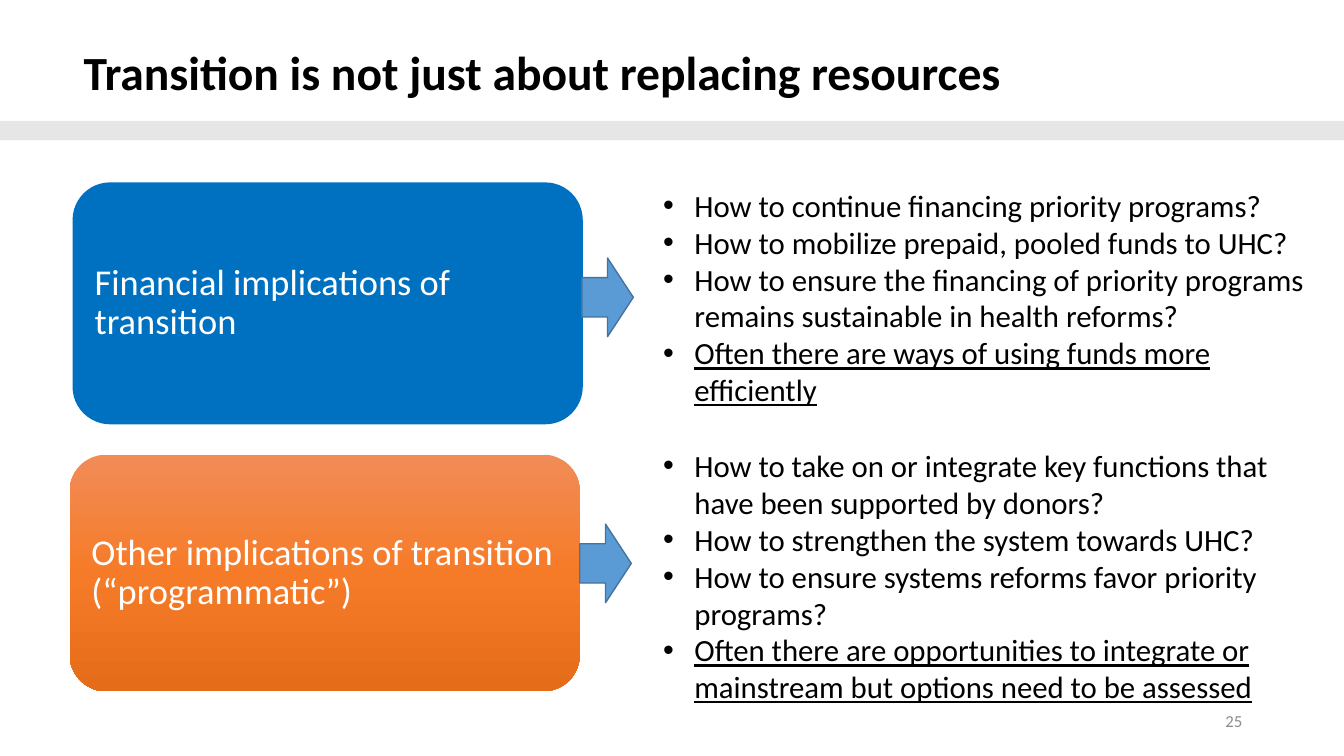
import copy

import pptx
import pptx.dml.color
import pptx.enum.shapes
import pptx.enum.text
import pptx.oxml.ns
import pptx.util
from lxml import etree

SHAPE = pptx.enum.shapes.MSO_SHAPE
ANCHOR = pptx.enum.text.MSO_ANCHOR
ALIGN = pptx.enum.text.PP_ALIGN
qn = pptx.oxml.ns.qn

COLORS = {
    "black": "000000", "white": "FFFFFF", "band": "E7E6E6", "number": "8C8C8C",
    "blue": "0070C0", "arrow": "5B9BD5", "arrow_edge": "43739E",
    "orange_top": "F18C57", "orange_middle": "F67B28", "orange_base": "E56C19",
}


def color(name):
    return pptx.dml.color.RGBColor.from_string(COLORS[name])


def write(para, text, size=22, ink="black", bold=False, underline=False,
          align=ALIGN.LEFT, spacing=1.0, bullet=False):
    """Put one formatted run of text into a paragraph."""
    para.alignment = align
    para.line_spacing = spacing
    span = para.add_run()
    span.text = text
    font = span.font
    font.name, font.size = "Calibri", pptx.util.Pt(size)
    font.bold, font.underline = bold, underline
    font.color.rgb = color(ink)
    if bullet:
        props = para._p.get_or_add_pPr()
        indent = pptx.util.Inches(0.31)
        props.set("marL", str(indent))
        props.set("indent", str(-indent))
        etree.SubElement(props, qn("a:buFont")).set("typeface", "Arial")
        etree.SubElement(props, qn("a:buChar")).set("char", "•")


class Page:
    """One slide; every place is left, top, width, height in percent of it."""

    def __init__(self, deck):
        self.deck = deck
        self.shapes = deck.slides.add_slide(deck.slide_layouts[6]).shapes

    def place(self, left, top, width, height):
        across, down = self.deck.slide_width / 100, self.deck.slide_height / 100
        return [round(value) for value in
                (left * across, top * down, width * across, height * down)]

    def shape(self, kind, place, fill, edge=None):
        shape = self.shapes.add_shape(kind, *self.place(*place))
        shape.shadow.inherit = False
        if isinstance(fill, str):
            shape.fill.solid()
            shape.fill.fore_color.rgb = color(fill)
        else:
            self.gradient(shape, fill)
        if edge:
            shape.line.color.rgb = color(edge)
            shape.line.width = pptx.util.Pt(1)
        else:
            shape.line.fill.background()
        return shape

    def gradient(self, shape, names):
        shape.fill.gradient()
        shape.fill.gradient_angle = 270
        stop_list = next(shape._element.iter(qn("a:gsLst")))
        while len(stop_list) < len(names):
            stop_list.append(copy.deepcopy(stop_list[0]))
        for index, (stop, name) in enumerate(zip(shape.fill.gradient_stops, names)):
            stop.color.rgb = color(name)
            stop.position = index / (len(names) - 1)

    def card(self, place, fill, text):
        box = self.shape(SHAPE.ROUNDED_RECTANGLE, place, fill)
        box.adjustments[0] = 0.155
        frame = box.text_frame
        frame.word_wrap = True
        frame.vertical_anchor = ANCHOR.MIDDLE
        # The rounded corners already inset the text by about as much again
        frame.margin_left = frame.margin_right = pptx.util.Inches(0.11)
        frame.margin_top = frame.margin_bottom = pptx.util.Inches(0.11)
        write(frame.paragraphs[0], text, size=26, ink="white", spacing=0.9)

    def text(self, place, anchor=ANCHOR.MIDDLE):
        frame = self.shapes.add_textbox(*self.place(*place)).text_frame
        frame.word_wrap = True
        frame.vertical_anchor = anchor
        return frame

    def line(self, place, text, **style):
        write(self.text(place).paragraphs[0], text, **style)

    def questions(self, place, lines):
        """Bulleted list whose last line is the underlined takeaway."""
        frame = self.text(place, ANCHOR.TOP)
        frame.auto_size = pptx.enum.text.MSO_AUTO_SIZE.SHAPE_TO_FIT_TEXT
        for index, text in enumerate(lines):
            para = frame.add_paragraph() if index else frame.paragraphs[0]
            write(para, text, bullet=True, underline=text == lines[-1])


# Each topic: card place, fill, label, arrow corner, list place, list lines
TOPICS = [
    ((5.18, 60.13, 37.96, 31.33), ("orange_top", "orange_middle", "orange_base"),
     "Other implications of transition (“programmatic”)",
     (43.14, 69.33), (48.61, 58.4, 50.86, 35.87),
     ["How to take on or integrate key functions that have been supported by donors?",
      "How to strengthen the system towards UHC?",
      "How to ensure systems reforms favor priority programs?",
      "Often there are opportunities to integrate or mainstream but options need to be assessed"]),
    ((5.4, 24.13, 37.96, 32), "blue",
     "Financial implications of transition",
     (43.29, 34.13), (48.61, 24, 49.51, 30.93),
     ["How to continue financing priority programs?",
      "How to mobilize prepaid, pooled funds to UHC?",
      "How to ensure the financing of priority programs remains sustainable in health reforms?",
      "Often there are ways of using funds more efficiently"]),
]


def main():
    deck = pptx.Presentation()
    deck.slide_width = pptx.util.Inches(13.33)
    deck.slide_height = pptx.util.Inches(7.5)
    page = Page(deck)

    # Heading and band
    page.shape(SHAPE.RECTANGLE, (0, 16, 100, 2.53), "band")
    page.line((5.48, 0.27, 86.27, 19.33),
              "Transition is not just about replacing resources",
              size=34, bold=True, spacing=0.9)

    # Topic cards, each pointing to its questions
    for card, fill, label, corner, list_place, lines in TOPICS:
        page.card(card, fill, label)
        page.shape(SHAPE.RIGHT_ARROW, (*corner, 3.83, 10.4), "arrow", "arrow_edge")
        page.questions(list_place, lines)

    # Page number
    page.line((70.67, 92.67, 22.5, 5.33), "25", size=12, ink="number", align=ALIGN.RIGHT)

    deck.save("out.pptx")


if __name__ == "__main__":
    main()
